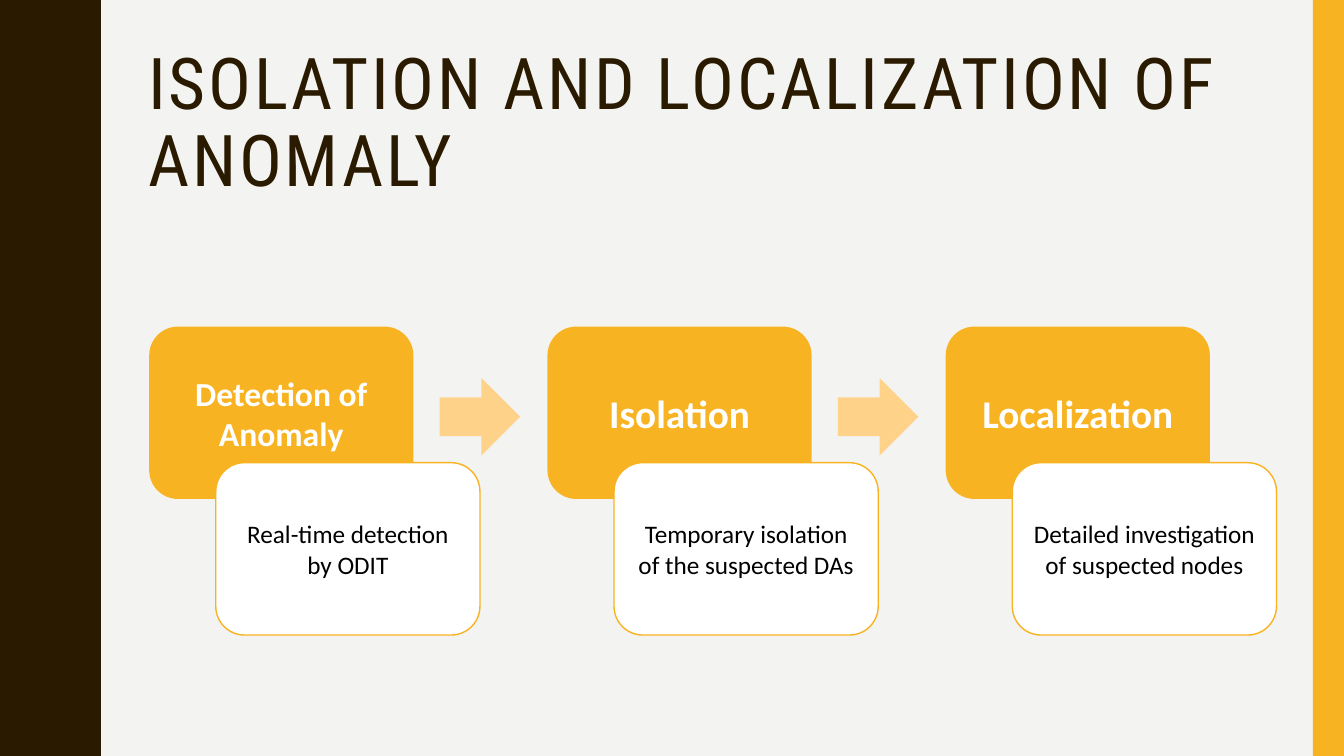
"""Builds the slide on isolation and localization of an anomaly."""
from dataclasses import dataclass

from pptx import Presentation
from pptx.dml.color import RGBColor
from pptx.enum.shapes import MSO_SHAPE as Preset
from pptx.enum.text import MSO_ANCHOR as Anchor, MSO_AUTO_SIZE as AutoSize, PP_ALIGN as Align
from pptx.util import Inches, Pt

AMBER, PALE_AMBER, BROWN = "F8B323", "FFD28A", "2A1A00"
WHITE, BLACK, PAPER = "FFFFFF", "000000", "F3F3F2"
CARD_WIDTH, CARD_HEIGHT = 2.62, 1.71
STAGE_LEFT, STAGE_TOP, STAGE_STEP = 1.48, 3.24, 3.95
HALF_WAVE = [(0.78, 0), (0.78, 0.07), (0.79, 0.14), (0.8, 0.2), (0.81, 0.25),
             (0.83, 0.29), (0.85, 0.33), (0.87, 0.38), (0.89, 0.42), (0.91, 0.46),
             (0.93, 0.5), (0.95, 0.55), (0.96, 0.61), (0.97, 0.68)]


@dataclass
class Stage:
    heading: str
    heading_size: int
    detail: str


STAGES = [
    Stage("Detection of Anomaly", 24, "Real-time detection by ODIT"),
    Stage("Isolation", 28, "Temporary isolation of the suspected DAs"),
    Stage("Localization", 28, "Detailed investigation of suspected nodes"),
]


def color(value: str) -> RGBColor:
    return RGBColor.from_string(value)


def paint(shape, fill: str, line: str | None = None) -> None:
    shape.shadow.inherit = False
    shape.fill.solid()
    shape.fill.fore_color.rgb = color(fill)
    if line:
        shape.line.color.rgb = color(line)
        shape.line.width = Pt(1)
    else:
        shape.line.fill.background()


def add_block(page, preset, left: float, top: float, width: float, height: float,
              fill: str, line: str | None = None):
    block = page.shapes.add_shape(preset, Inches(left), Inches(top), Inches(width), Inches(height))
    paint(block, fill, line)
    return block


def write(box, text: str, size: int, font: str, ink: str, bold: bool, align, frame_format: dict):
    frame = box.text_frame
    for name, value in frame_format.items():
        setattr(frame, name, value)
    para = frame.paragraphs[0]
    para.alignment = align
    span = para.add_run()
    span.text = text
    for name, value in {"size": Pt(size), "name": font, "bold": bold}.items():
        setattr(span.font, name, value)
    span.font.color.rgb = color(ink)
    return para, span


def add_wavy_edge(page) -> None:
    outline = [(0, 0)]
    for half in range(10):
        for x, y in HALF_WAVE:
            outline.append((1.75 - x if half % 2 else x, y + half * 0.75))
    outline += [(0.78, 7.5), (0, 7.5)]
    builder = page.shapes.build_freeform(0, 0, scale=Inches(1))
    builder.add_line_segments(outline[1:], close=True)
    paint(builder.convert_to_shape(), BROWN)


def add_title(page) -> None:
    title = page.shapes.title
    area = {"left": 1.37, "top": 0.42, "width": 11.13, "height": 1.63}
    for name, value in area.items():
        setattr(title, name, Inches(value))
    para, span = write(title, "ISOLATION AND LOCALIZATION OF ANOMALY", 51, "Roboto Condensed",
                       BROWN, False, Align.LEFT,
                       {"word_wrap": True, "auto_size": AutoSize.NONE,
                        "vertical_anchor": Anchor.TOP})
    para.line_spacing = 0.9
    span.font._element.set("spc", "200")


def add_card(page, left: float, top: float, fill: str, line: str | None,
             text: str, size: int, ink: str, bold: bool) -> None:
    card = add_block(page, Preset.ROUNDED_RECTANGLE, left, top, CARD_WIDTH, CARD_HEIGHT, fill, line)
    write(card, text, size, "Calibri", ink, bold, Align.CENTER,
          {"word_wrap": True, "vertical_anchor": Anchor.MIDDLE,
           "margin_left": Inches(0.11), "margin_right": Inches(0.11)})


def add_stage(page, index: int, stage: Stage) -> None:
    left = STAGE_LEFT + index * STAGE_STEP
    add_card(page, left, STAGE_TOP, AMBER, None, stage.heading, stage.heading_size, WHITE, True)
    add_card(page, left + 0.66, STAGE_TOP + 1.35, WHITE, AMBER, stage.detail, 18, BLACK, False)
    if index < len(STAGES) - 1:
        add_block(page, Preset.RIGHT_ARROW, left + 2.88, 3.75, 0.8, 0.77, PALE_AMBER)


def main() -> None:
    deck = Presentation()
    deck.slide_width, deck.slide_height = Inches(13.33), Inches(7.5)
    page = deck.slides.add_slide(deck.slide_layouts[5])
    page.background.fill.solid()
    page.background.fill.fore_color.rgb = color(PAPER)
    add_wavy_edge(page)
    add_block(page, Preset.RECTANGLE, 13.02, 0, 0.31, 7.5, AMBER)
    add_title(page)
    for index, stage in enumerate(STAGES):
        add_stage(page, index, stage)
    deck.save("out.pptx")


if __name__ == "__main__":
    main()
